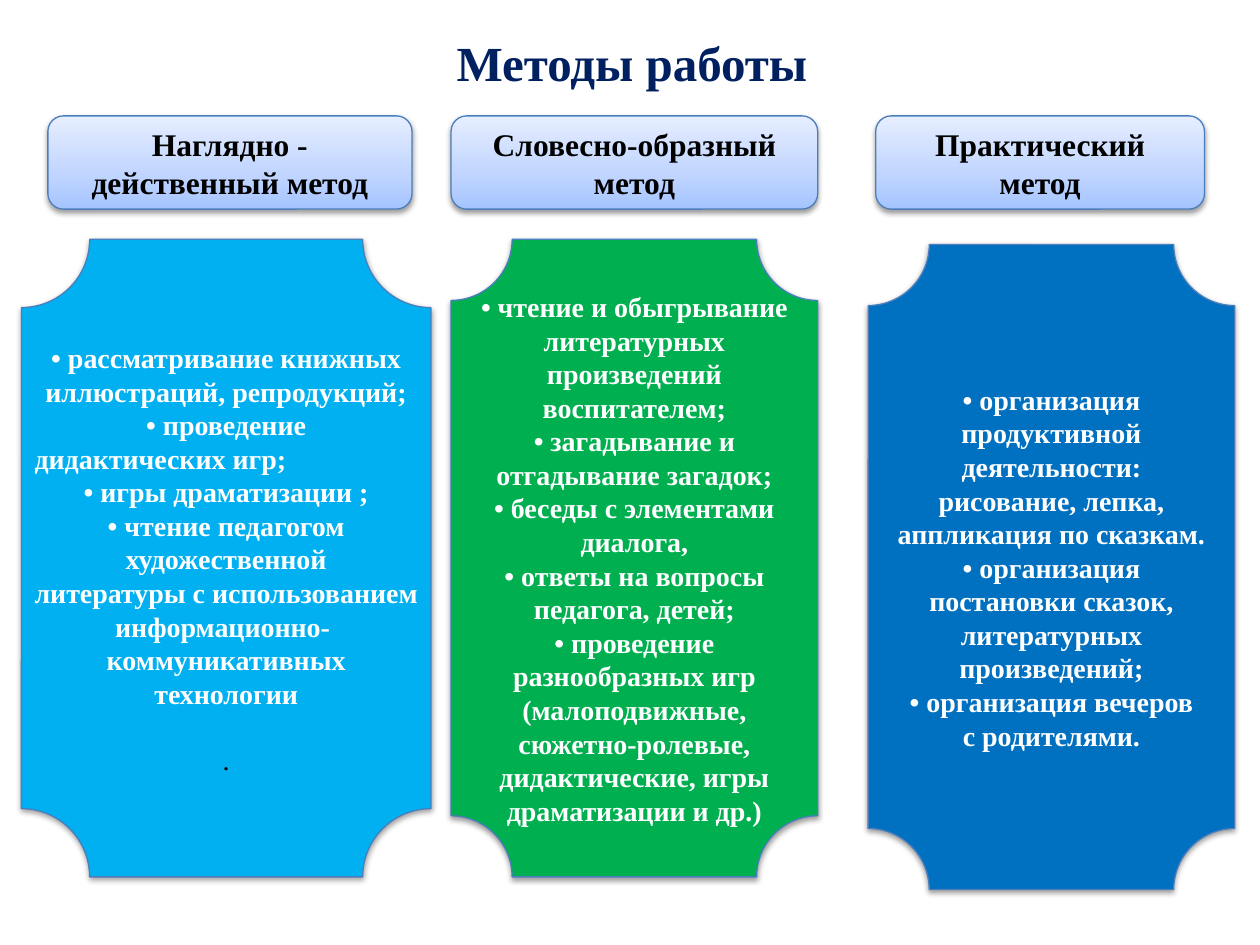
import copy

import pptx
import pptx.dml.color
import pptx.enum.shapes
import pptx.enum.text
import pptx.oxml
import pptx.oxml.ns
import pptx.util

Inches = pptx.util.Inches
Pt = pptx.util.Pt
RGB = pptx.dml.color.RGBColor.from_string
SHAPE = pptx.enum.shapes.MSO_SHAPE
ALIGN = pptx.enum.text.PP_ALIGN
ANCHOR = pptx.enum.text.MSO_ANCHOR
FIT = pptx.enum.text.MSO_AUTO_SIZE
qn = pptx.oxml.ns.qn

COLORS = {
    "navy": "002060", "black": "000000", "white": "FFFFFF", "edge": "4B7EBC",
    "sky": "00B0F0", "green": "00B050", "blue": "0070C0",
}
FADE = [(0, "A4C4FF"), (0.35, "BFD4FF"), (1, "E6EEFF")]
SHADOW = (
    '<a:effectLst xmlns:a="http://schemas.openxmlformats.org/drawingml/2006/main">'
    '<a:outerShdw blurRad="40000" dist="20000" dir="5400000" rotWithShape="0">'
    '<a:srgbClr val="000000"><a:alpha val="38000"/></a:srgbClr>'
    '</a:outerShdw></a:effectLst>'
)


def write(frame, text, size=16, color="white", bold=True, wrap=True,
          anchor=ANCHOR.MIDDLE):
    frame.word_wrap = wrap
    frame.vertical_anchor = anchor
    for i, line in enumerate(text.split("\n")):
        para = frame.paragraphs[0] if i == 0 else frame.add_paragraph()
        para.alignment = ALIGN.CENTER
        run = para.add_run()
        run.text = line
        run.font.name = "Times New Roman"
        run.font.size = Pt(size)
        run.font.bold = bold
        run.font.color.rgb = RGB(COLORS[color])


def draw(kind, left, top, width, height):
    shape = slide.shapes.add_shape(
        kind, Inches(left), Inches(top), Inches(width), Inches(height))
    shape.line.color.rgb = RGB(COLORS["edge"])
    shape.line.width = Pt(0.75)
    shape._element.spPr.append(pptx.oxml.parse_xml(SHADOW))
    return shape


deck = pptx.Presentation()
deck.slide_width, deck.slide_height = Inches(10), Inches(7.5)
slide = deck.slides.add_slide(deck.slide_layouts[5])

# Title
title = slide.shapes.title
title.left, title.top = Inches(1.85), Inches(0.21)
title.width, title.height = Inches(6.33), Inches(0.57)
write(title.text_frame, "Методы работы", size=28, color="navy",
      anchor=ANCHOR.TOP)
title.text_frame.auto_size = FIT.SHAPE_TO_FIT_TEXT

# Plaques with the content of each method
plaques = [
    (0.17, 1.9, 3.25, 5.06, "sky", """• рассматривание книжных
иллюстраций, репродукций;
• проведение
дидактических игр;
• игры драматизации ;
• чтение педагогом
художественной
литературы с использованием
информационно- 
коммуникативных
технологии
."""),
    (3.58, 1.9, 2.91, 5.06, "green", """• чтение и обыгрывание
литературных
произведений
воспитателем;
• загадывание и
отгадывание загадок;
• беседы с элементами
диалога,
• ответы на вопросы
педагога, детей;
• проведение
разнообразных игр
(малоподвижные,
сюжетно-ролевые,
дидактические, игры
драматизации и др.)"""),
    (6.89, 1.94, 2.91, 5.12, "blue", """• организация
продуктивной
деятельности:
рисование, лепка,
аппликация по сказкам.
• организация
постановки сказок,
литературных
произведений;
• организация вечеров
с родителями."""),
]
frames = []
for left, top, width, height, color, text in plaques:
    plaque = draw(SHAPE.PLAQUE, left, top, width, height)
    plaque.fill.solid()
    plaque.fill.fore_color.rgb = RGB(COLORS[color])
    write(plaque.text_frame, text, wrap=False)
    frames.append(plaque.text_frame)

# Lines that differ from the rest of the first plaque
paras = frames[0].paragraphs
paras[3].alignment = ALIGN.LEFT
paras[-1].space_before = Pt(18.4)
dot = paras[-1].runs[0].font
dot.bold = False
dot.color.rgb = RGB(COLORS["black"])

# Headers with the name of each method
heads = [
    (SHAPE.FLOWCHART_ALTERNATE_PROCESS, 0.38, 2.89,
     "Наглядно - действенный метод"),
    (SHAPE.ROUNDED_RECTANGLE, 3.58, 2.91, "Словесно-образный\nметод"),
    (SHAPE.ROUNDED_RECTANGLE, 6.95, 2.61, "Практический метод"),
]
for kind, left, width, text in heads:
    head = draw(kind, left, 0.92, width, 0.74)
    head.fill.gradient()
    head.fill.gradient_angle = 90
    stops = head._element.spPr.find(".//" + qn("a:gsLst"))
    stops.append(copy.deepcopy(stops[0]))
    for stop, (place, color) in zip(head.fill.gradient_stops, FADE):
        stop.position = place
        stop.color.rgb = RGB(color)
    write(head.text_frame, text, size=18, color="black")

deck.save("out.pptx")
